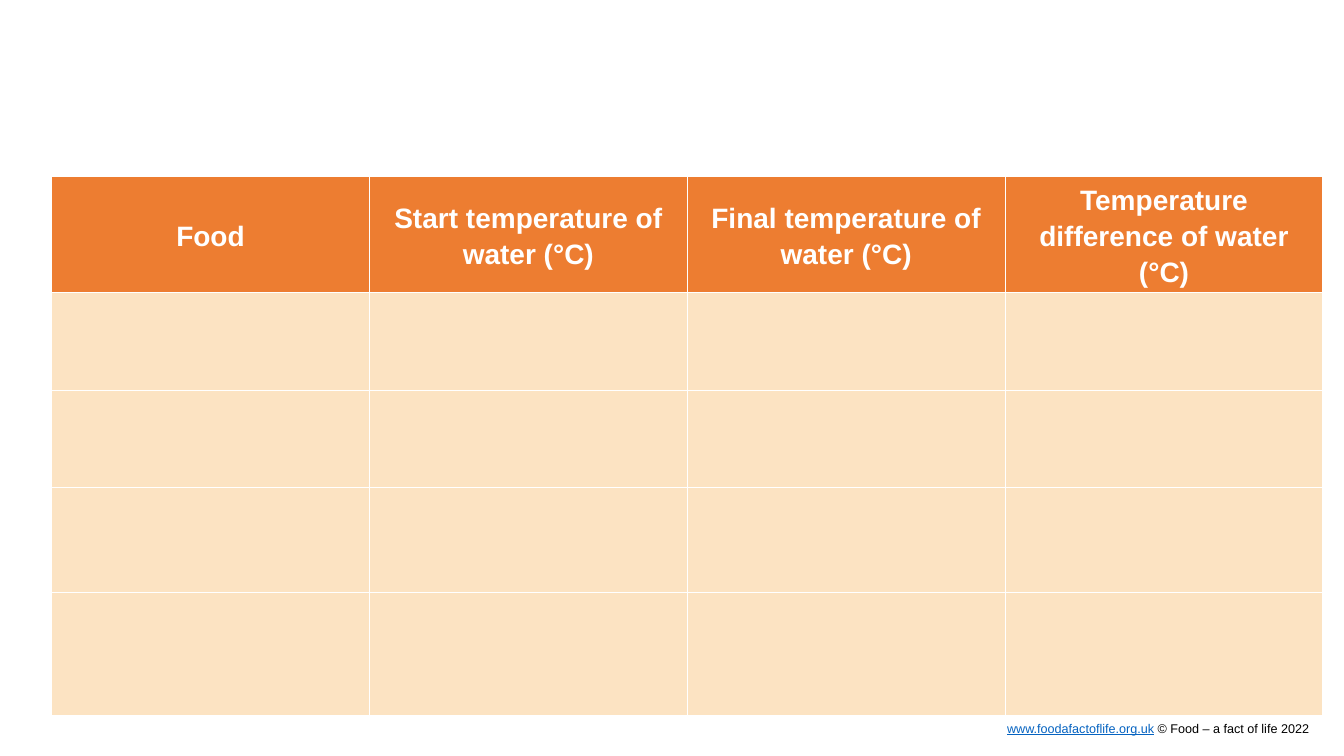
from dataclasses import dataclass

from lxml import etree
from pptx import Presentation
from pptx import util as u
from pptx.dml.color import RGBColor
from pptx.enum import text
from pptx.oxml import ns

COLOURS = {
    "header": "ED7D31",
    "body": "FCE3C2",
    "rule": "FFFFFF",
    "heading": "FFFFFF",
    "link": "0563C1",
    "credit": "000000",
}
HEADINGS = (
    "Food",
    "Start temperature of water (°C)",
    "Final temperature of water (°C)",
    "Temperature difference of water (°C)",
)
COLUMN_WIDTH = 8.01


@dataclass(frozen=True)
class ResultRow:
    height: float
    fill: str
    labels: tuple[str, ...] = ("",) * len(HEADINGS)


ROWS = (
    ResultRow(2.92, "header", HEADINGS),
    ResultRow(2.46, "body"),
    ResultRow(2.46, "body"),
    ResultRow(2.64, "body"),
    ResultRow(3.1, "body"),
)


def add_text(paragraph, words: str, *, size: float, colour: str,
             bold: bool = False, underline: bool = False) -> None:
    run = paragraph.add_run()
    run.text = words
    run.font.name = "Arial"
    run.font.size = u.Pt(size)
    run.font.bold = bold
    run.font.underline = underline
    run.font.color.rgb = RGBColor.from_string(COLOURS[colour])


def add_borders(cell, colour: str, width: float) -> None:
    properties = cell._tc.get_or_add_tcPr()
    for position, side in enumerate(("lnL", "lnR", "lnT", "lnB")):
        line = etree.Element(ns.qn(f"a:{side}"), w=str(u.Pt(width)))
        fill = etree.SubElement(line, ns.qn("a:solidFill"))
        etree.SubElement(fill, ns.qn("a:srgbClr"), val=COLOURS[colour])
        properties.insert(position, line)


def format_cell(cell, label: str, fill: str) -> None:
    cell.fill.solid()
    cell.fill.fore_color.rgb = RGBColor.from_string(COLOURS[fill])
    add_borders(cell, "rule", 1)
    if not label:
        return
    cell.vertical_anchor = text.MSO_ANCHOR.MIDDLE
    cell.margin_left = cell.margin_right = u.Cm(0.18)
    cell.margin_top = cell.margin_bottom = u.Cm(0)
    heading = cell.text_frame.paragraphs[0]
    heading.alignment = text.PP_ALIGN.CENTER
    heading.line_spacing = 1.15
    heading.space_after = u.Pt(10)
    add_text(heading, label, size=20, colour="heading", bold=True)


def add_results(slide) -> None:
    results = slide.shapes.add_table(
        len(ROWS), len(HEADINGS), u.Cm(1.3), u.Cm(4.45),
        u.Cm(COLUMN_WIDTH * len(HEADINGS)),
        u.Cm(sum(row.height for row in ROWS)),
    ).table
    results.horz_banding = False
    for column in results.columns:
        column.width = u.Cm(COLUMN_WIDTH)
    for table_row, row in zip(results.rows, ROWS):
        table_row.height = u.Cm(row.height)
        for cell, label in zip(table_row.cells, row.labels):
            format_cell(cell, label, row.fill)


def add_footer(slide) -> None:
    footer = slide.shapes.add_textbox(
        u.Cm(3.2), u.Cm(18.16), u.Cm(29.79), u.Cm(0.38)).text_frame
    footer.word_wrap = True
    footer.auto_size = text.MSO_AUTO_SIZE.SHAPE_TO_FIT_TEXT
    footer.margin_left = footer.margin_right = u.Cm(0)
    footer.margin_top = footer.margin_bottom = u.Cm(0)
    credit = footer.paragraphs[0]
    credit.alignment = text.PP_ALIGN.RIGHT
    add_text(credit, "www.foodafactoflife.org.uk", size=9, colour="link",
             underline=True)
    add_text(credit, " © Food – a fact of life 2022", size=9, colour="credit")


def main() -> None:
    deck = Presentation()
    deck.slide_width = u.Cm(33.87)
    deck.slide_height = u.Cm(19.05)
    slide = deck.slides.add_slide(deck.slide_layouts[6])
    add_footer(slide)
    add_results(slide)
    deck.save("out.pptx")


if __name__ == "__main__":
    main()
